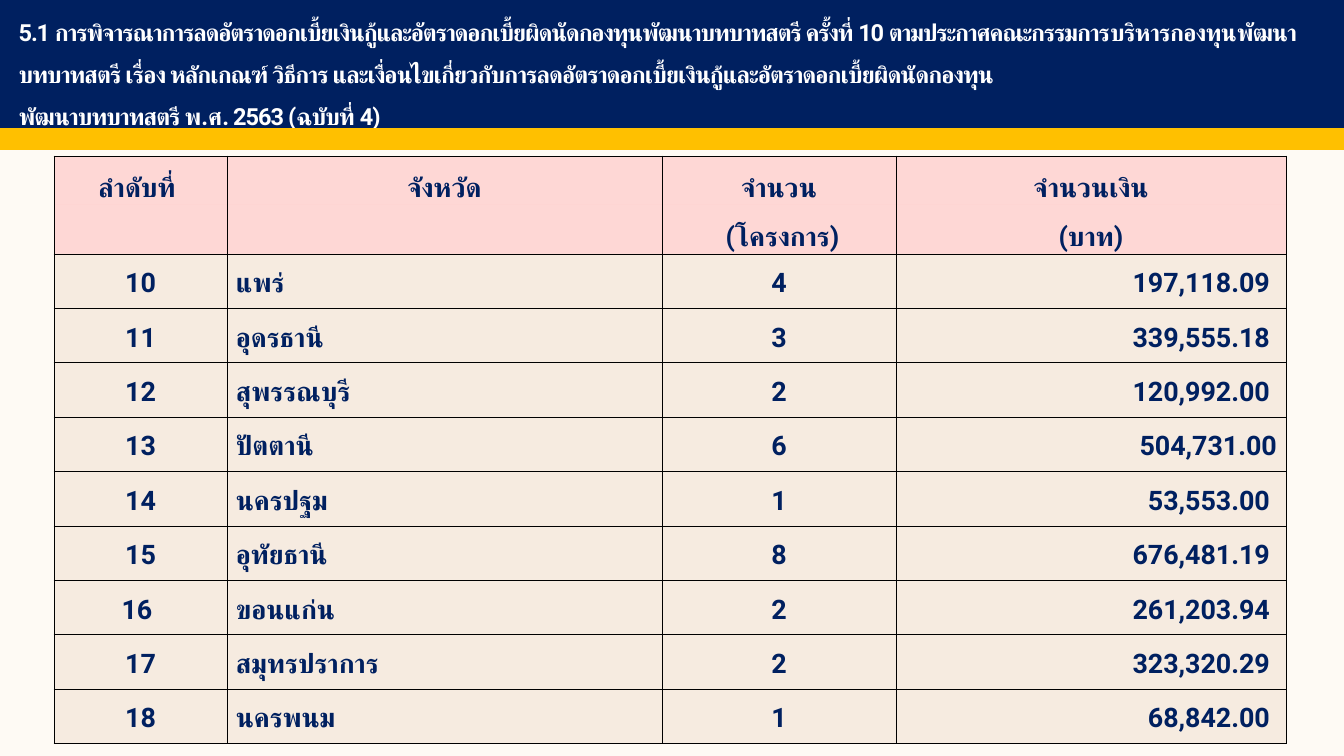
"""Build the slide listing interest-rate reductions by province."""
from dataclasses import dataclass

from lxml import etree
from pptx import Presentation
from pptx import util as u
from pptx.dml.color import RGBColor
from pptx.enum import shapes, text
from pptx.oxml import ns

TITLE = [
    [("5.1 การพิจารณาการลดอัตราดอกเบี้ยเงินกู้และอัตราดอกเบี้ยผิดนัดกองทุนพัฒนาบทบาทสตรี ครั้งที่ 10 ตามประกาศคณะกรรมการ", -70),
     ("บริหารกองทุน", -40),
     ("พัฒนาบทบาทสตรี เรื่อง หลักเกณฑ์ วิธีการ และเงื่อนไขเกี่ยวกับการลดอัตราดอกเบี้ยเงินกู้และอัตราดอกเบี้ยผิดนัดกองทุน", -60)],
    [("พัฒนาบทบาทสตรี พ.ศ. 2563 (ฉบับที่ 4)", -60)],
]
HEADINGS = [
    ("ลำดับที่", "จังหวัด", "จำนวน", "จำนวนเงิน"),
    ("", "", "(โครงการ)", "(บาท)"),
]
PROVINCES = [
    ("10", "แพร่", "4", "197,118.09"),
    ("11", "อุดรธานี", "3", "339,555.18"),
    ("12", "สุพรรณบุรี", "2", "120,992.00"),
    ("13", "ปัตตานี", "6", "504,731.00"),
    ("14", "นครปฐม", "1", "53,553.00"),
    ("15", "อุทัยธานี", "8", "676,481.19"),
    ("16", "ขอนแก่น", "2", "261,203.94"),
    ("17", "สมุทรปราการ", "2", "323,320.29"),
    ("18", "นครพนม", "1", "68,842.00"),
]
COLUMNS = (173, 435, 234, 390)
HEADING_HEIGHT, BODY_HEIGHT = 49, 490
NUDGE = 7
NUDGED_LEFT = {"ลำดับที่", "16"} | {row[3] for row in PROVINCES if row[0] != "13"}
NUDGED_RIGHT = {"(โครงการ)"}
LEFT, CENTER, RIGHT = text.PP_ALIGN.LEFT, text.PP_ALIGN.CENTER, text.PP_ALIGN.RIGHT


@dataclass(frozen=True)
class Theme:
    font: str = "Roboto"
    page: str = "FEFAF4"
    navy: str = "002060"
    gold: str = "FFC000"
    white: str = "FFFFFF"
    rule: str = "000000"
    heading: tuple = ("FFC9C9", 70)
    body: tuple = ("F4E8DC", 80)
    title_size: int = 14
    table_size: int = 16
    rule_width: float = 0.5


THEME = Theme()


def px(length):
    return u.Emu(round(length * 914400 / 121))


def rgb(color):
    return RGBColor.from_string(color)


def add_run(paragraph, words, size, color, spacing=0):
    run = paragraph.add_run()
    run.text = words
    run.font.name, run.font.size, run.font.bold = THEME.font, u.Pt(size), True
    run.font.color.rgb = rgb(color)
    properties = run.font._element
    etree.SubElement(properties, ns.qn("a:cs"), typeface=THEME.font)
    if spacing:
        properties.set("spc", str(spacing))


def add_band(slide, top, height, color):
    band = slide.shapes.add_shape(shapes.MSO_SHAPE.RECTANGLE, 0, px(top), px(1344), px(height))
    band.shadow.inherit = False
    band.fill.solid()
    band.fill.fore_color.rgb = rgb(color)
    band.line.color.rgb = rgb(color)
    band.line.width = u.Pt(1)


def add_title(slide):
    title = slide.shapes.add_shape(shapes.MSO_SHAPE.ROUNDED_RECTANGLE, px(1), px(7), px(1340), px(120))
    title.shadow.inherit = False
    title.fill.background()
    title.line.fill.background()
    frame = title.text_frame
    frame.word_wrap = True
    frame.vertical_anchor = text.MSO_ANCHOR.MIDDLE
    paragraph = frame.paragraphs[0]
    paragraph.alignment, paragraph.line_spacing = LEFT, 1.5
    for number, line in enumerate(TITLE):
        if number:
            paragraph.add_line_break()
        for words, spacing in line:
            add_run(paragraph, words, THEME.title_size, THEME.white, spacing)


def set_borders(cell, hidden):
    properties = cell._tc.get_or_add_tcPr()
    for side in "LRTB":
        width = str(u.Pt(THEME.rule_width))
        line = etree.SubElement(properties, ns.qn(f"a:ln{side}"), w=width)
        if side == hidden:
            etree.SubElement(line, ns.qn("a:noFill"))
        else:
            fill = etree.SubElement(line, ns.qn("a:solidFill"))
            etree.SubElement(fill, ns.qn("a:srgbClr"), val=THEME.rule)


def fill_cell(cell, words, align, heading, hidden):
    set_borders(cell, hidden)
    color, opacity = THEME.heading if heading else THEME.body
    cell.fill.solid()
    cell.fill.fore_color.rgb = rgb(color)
    tint = cell._tc.tcPr.find(".//" + ns.qn("a:solidFill") + "[last()]")
    tint = cell._tc.tcPr.findall(ns.qn("a:solidFill"))[0][0]
    etree.SubElement(tint, ns.qn("a:alpha"), val=str(opacity * 1000))
    inset = 1 if heading else 9
    cell.margin_left = px(inset + NUDGE * (words in NUDGED_RIGHT))
    cell.margin_right = px(inset + NUDGE * (words in NUDGED_LEFT))
    cell.margin_top, cell.margin_bottom = px(int(heading)), 0
    cell.vertical_anchor = text.MSO_ANCHOR.MIDDLE
    paragraph = cell.text_frame.paragraphs[0]
    paragraph.alignment = align
    paragraph.line_spacing = 1.5 if heading else 1.15
    if not heading:
        paragraph.space_after = u.Pt(10)
    if words:
        add_run(paragraph, words, THEME.table_size, THEME.navy)
    else:
        paragraph.font.size = u.Pt(THEME.table_size)


def add_table(slide):
    rows = HEADINGS + PROVINCES
    height = HEADING_HEIGHT * len(HEADINGS) + BODY_HEIGHT
    table = slide.shapes.add_table(len(rows), len(COLUMNS), px(54), px(156),
                                   px(sum(COLUMNS)), px(height)).table
    table.first_row = table.horz_banding = False
    for column, width in zip(table.columns, COLUMNS):
        column.width = px(width)
    for number, row in enumerate(rows):
        heading = number < len(HEADINGS)
        table.rows[number].height = px(HEADING_HEIGHT if heading else BODY_HEIGHT / len(PROVINCES))
        aligns = [CENTER] * 4 if heading else [CENTER, LEFT, CENTER, RIGHT]
        hidden = {0: "B", 1: "T"}.get(number)
        for position, (words, align) in enumerate(zip(row, aligns)):
            fill_cell(table.cell(number, position), words, align, heading, hidden)


def main():
    deck = Presentation()
    deck.slide_width, deck.slide_height = px(1344), px(756)
    slide = deck.slides.add_slide(deck.slide_layouts[6])
    slide.background.fill.solid()
    slide.background.fill.fore_color.rgb = rgb(THEME.page)
    add_band(slide, 0, 129, THEME.navy)
    add_title(slide)
    add_band(slide, 129, 20, THEME.gold)
    add_table(slide)
    deck.save("out.pptx")


if __name__ == "__main__":
    main()
